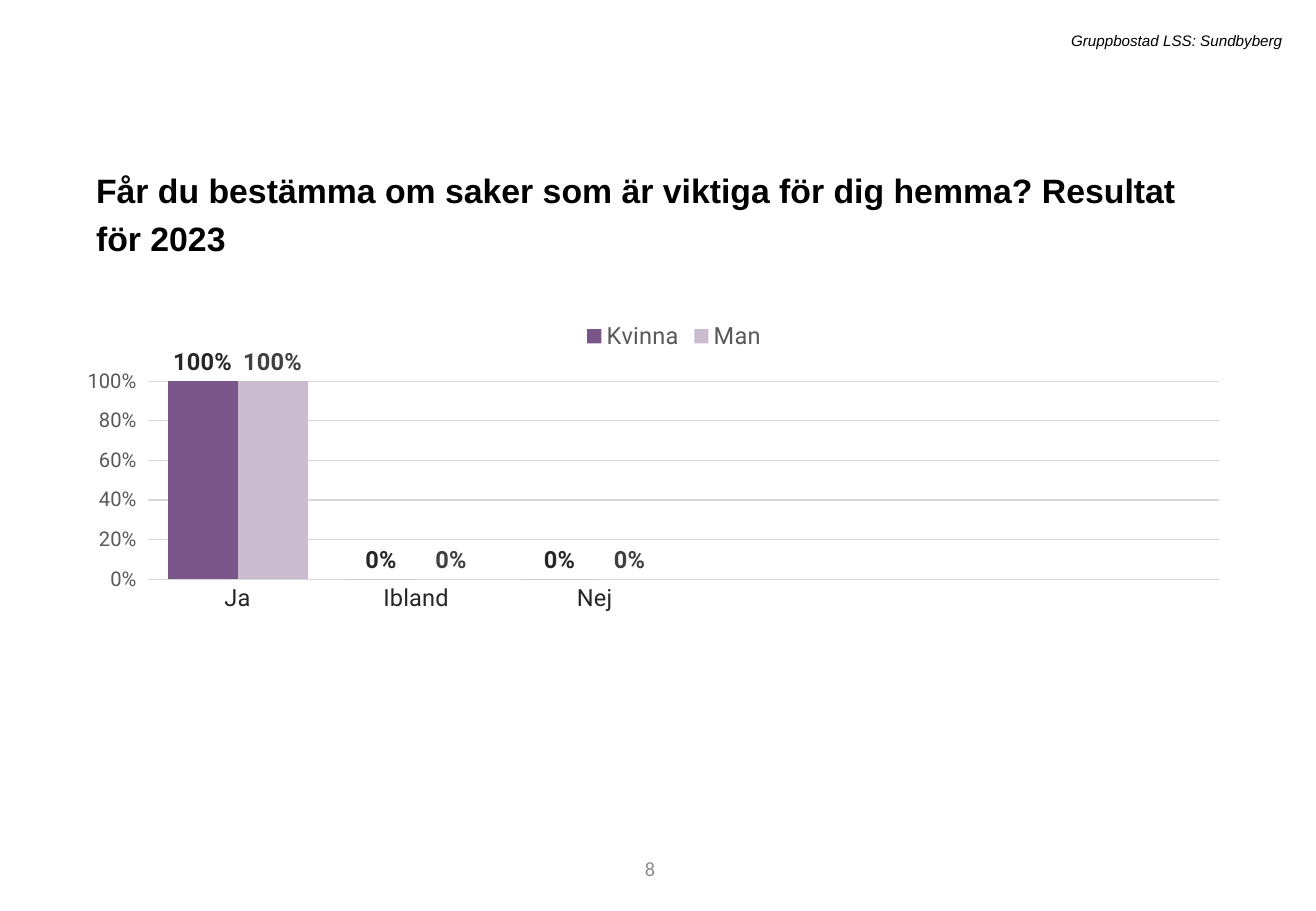
"""Build the survey result slide with a clustered column chart by gender."""
import pptx
import pptx.chart.data
import pptx.dml.color
import pptx.enum.chart
import pptx.enum.text
import pptx.oxml
import pptx.util
from pptx.util import Inches, Pt

Align = pptx.enum.text.PP_ALIGN
Anchor = pptx.enum.text.MSO_ANCHOR
AutoSize = pptx.enum.text.MSO_AUTO_SIZE
Tick = pptx.enum.chart.XL_TICK_MARK

QUESTION = "Får du bestämma om saker som är viktiga för dig hemma? Resultat för 2023"
UNIT = "Gruppbostad LSS: Sundbyberg"
PAGE_NUMBER = "8"
ANSWERS = ["Ja", "Ibland", "Nej", "", "", ""]
SHARES = {"Kvinna": (1, 0, 0), "Man": (1, 0, 0)}

THEME = {
    "question": {"name": "Arial", "size": 20, "color": "000000", "bold": True},
    "unit": {"name": "Arial", "size": 9, "color": "000000", "italic": True},
    "page": {"name": "Calibri", "size": 12, "color": "8C8C8C"},
    "chart": {"name": "Roboto", "size": 10, "color": "000000"},
    "answers": {"name": "Roboto", "size": 14, "color": "262626"},
    "scale": {"name": "Roboto", "size": 12, "color": "595959"},
    "legend": {"name": "Roboto", "size": 14, "color": "595959"},
    "Kvinna": {"name": "Roboto", "size": 14, "color": "262626", "bold": True},
    "Man": {"name": "Roboto", "size": 14, "color": "404040", "bold": True},
    "columns": {"Kvinna": "7A5589", "Man": "CABBD0"},
    "rule": "D9D9D9",
}
PLACES = {
    "question": (0.69, 1.28, 9.4, 0.47),
    "unit": (1.79, 0.21, 8.86, 0.25),
    "page": (3.05, 6.95, 2.44, 0.4),
    "chart": (0.72, 2.53, 9.4, 3.95),
}
PLOT_LAYOUT = {"layoutTarget": "inner", "xMode": "edge", "yMode": "edge",
               "x": 0.052, "y": 0.154, "w": 0.939, "h": 0.413}
LEGEND_LAYOUT = {"xMode": "edge", "yMode": "edge", "x": 0.43, "y": 0.02}
CHART_NS = "http://schemas.openxmlformats.org/drawingml/2006/chart"


def rgb(code):
    """Return the colour for a hex code."""
    return pptx.dml.color.RGBColor.from_string(code)


def place(part):
    """Return the left, top, width and height of a part."""
    return [Inches(length) for length in PLACES[part]]


def apply(target, values):
    """Set each attribute of the target from the dict."""
    for key, value in values.items():
        setattr(target, key, value)


def style(font, role):
    """Format a font by its role in the theme."""
    look = dict(THEME[role])
    font.color.rgb = rgb(look.pop("color"))
    apply(font, {**look, "size": Pt(look["size"])})


def write(box, role, wording, frame_format, paragraph_format):
    """Fill a text shape with one formatted paragraph."""
    box.left, box.top, box.width, box.height = place(role)
    apply(box.text_frame, {"word_wrap": True, **frame_format})
    paragraph = box.text_frame.paragraphs[0]
    apply(paragraph, paragraph_format)
    run = paragraph.add_run()
    run.text = wording
    style(run.font, role)


def set_layout(element, position, values):
    """Give a chart element a manual layout."""
    for old in element.findall(f"{{{CHART_NS}}}layout"):
        element.remove(old)
    items = "".join(f'<c:{key} val="{value}"/>' for key, value in values.items())
    element.insert(position, pptx.oxml.parse_xml(
        f'<c:layout xmlns:c="{CHART_NS}"><c:manualLayout>{items}'
        "</c:manualLayout></c:layout>"))


def rule(line):
    """Draw a line in the thin grey of the chart."""
    line.color.rgb = rgb(THEME["rule"])
    line.width = Pt(0.75)


def add_shares(slide):
    """Add the column chart of answers by gender."""
    shares = pptx.chart.data.CategoryChartData(number_format="0%")
    shares.categories = ANSWERS
    for gender, values in SHARES.items():
        blanks = [None] * (len(ANSWERS) - len(values))
        shares.add_series(gender, [*values, *blanks])
    chart = slide.shapes.add_chart(
        pptx.enum.chart.XL_CHART_TYPE.COLUMN_CLUSTERED, *place("chart"), shares).chart
    apply(chart, {"has_title": False, "has_legend": True})
    style(chart.font, "chart")

    apply(chart.legend, {"position": pptx.enum.chart.XL_LEGEND_POSITION.TOP,
                         "include_in_layout": False})
    style(chart.legend.font, "legend")
    set_layout(chart.legend._element, 1, LEGEND_LAYOUT)
    set_layout(chart.plots[0]._element.getparent(), 0, PLOT_LAYOUT)

    answers, scale = chart.category_axis, chart.value_axis
    apply(answers, {"major_tick_mark": Tick.NONE, "minor_tick_mark": Tick.NONE})
    apply(scale, {"minimum_scale": 0, "maximum_scale": 1, "major_unit": 0.2,
                  "major_tick_mark": Tick.OUTSIDE, "minor_tick_mark": Tick.NONE,
                  "has_major_gridlines": True})
    apply(scale.tick_labels, {"number_format": "0%", "number_format_is_linked": False})
    style(answers.tick_labels.font, "answers")
    style(scale.tick_labels.font, "scale")
    rule(answers.format.line)
    rule(scale.major_gridlines.format.line)
    scale.format.line.fill.background()

    apply(chart.plots[0], {"gap_width": 55, "overlap": 0, "vary_by_categories": False})
    for columns in chart.plots[0].series:
        columns.format.fill.solid()
        columns.format.fill.fore_color.rgb = rgb(THEME["columns"][columns.name])
        apply(columns.data_labels, {
            "show_value": True, "number_format": "0%", "number_format_is_linked": False,
            "position": pptx.enum.chart.XL_LABEL_POSITION.OUTSIDE_END})
        style(columns.data_labels.font, columns.name)


def main():
    """Build and save the slide."""
    deck = pptx.Presentation()
    apply(deck, {"slide_width": Inches(10.83), "slide_height": Inches(7.5)})
    slide = deck.slides.add_slide(deck.slide_layouts[5])
    growing = {"auto_size": AutoSize.SHAPE_TO_FIT_TEXT, "vertical_anchor": Anchor.TOP}
    write(slide.shapes.title, "question", QUESTION, growing,
          {"alignment": Align.LEFT, "line_spacing": 1.2, "space_before": Pt(10)})
    add_shares(slide)
    write(slide.shapes.add_textbox(*place("unit")), "unit", UNIT, growing,
          {"alignment": Align.RIGHT})
    write(slide.shapes.add_textbox(*place("page")), "page", PAGE_NUMBER,
          {"vertical_anchor": Anchor.MIDDLE}, {"alignment": Align.RIGHT})
    deck.save("out.pptx")


if __name__ == "__main__":
    main()
